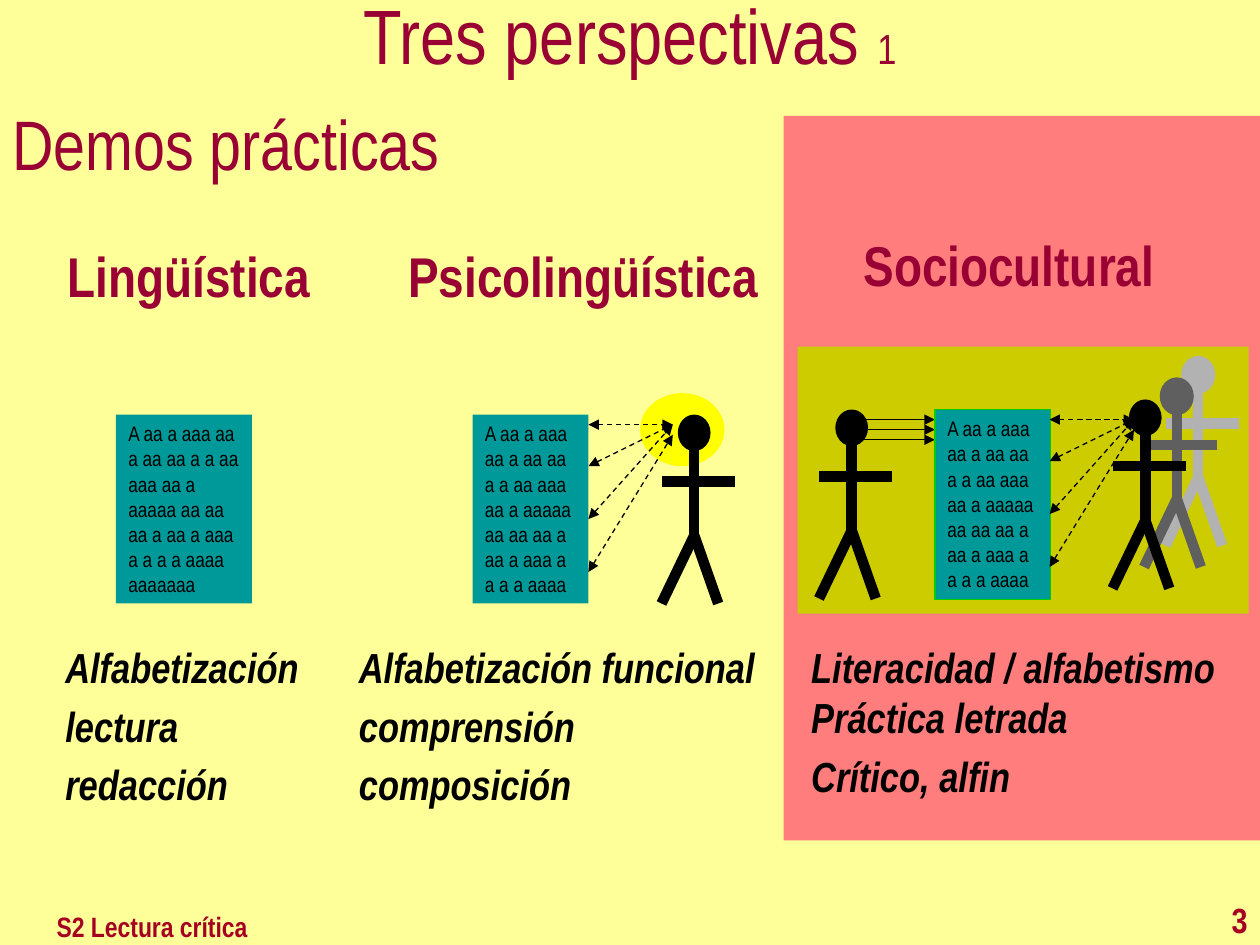
from dataclasses import dataclass

import pptx
import pptx.dml.color
import pptx.enum.dml
import pptx.enum.shapes
import pptx.enum.text
import pptx.oxml.ns
import pptx.util
from lxml import etree

Inches = pptx.util.Inches
Pt = pptx.util.Pt
Kind = pptx.enum.shapes.MSO_SHAPE
Align = pptx.enum.text.PP_ALIGN
Anchor = pptx.enum.text.MSO_ANCHOR


@dataclass(frozen=True)
class Theme:
    font: str = "Arial Narrow"
    back: str = "FFFF99"
    head: str = "990033"
    foot: str = "A50021"
    ink: str = "000000"
    mid: str = "5F5F5F"
    pale: str = "B2B2B2"
    page: str = "009999"
    edge: str = "00CC00"
    glow: str = "FFFF00"
    panel: str = "FF7D7D"
    scene: str = "CCCC00"
    title: float = 44
    lead: float = 40
    name: float = 32
    body: float = 24
    num: float = 20
    note: float = 16
    small: float = 12
    limb: float = 6
    thin: float = 0.75


@dataclass(frozen=True)
class Box:
    x: float
    y: float
    w: float
    h: float

    def spans(self) -> list:
        return [Inches(v) for v in (self.x, self.y, self.w, self.h)]


@dataclass(frozen=True)
class Column:
    name: str
    top: Box
    notes: tuple
    base: Box


T = Theme()
deck = pptx.Presentation()
deck.slide_width, deck.slide_height = Inches(10), Inches(7.5)
slide = deck.slides.add_slide(deck.slide_layouts[6])


def color(code: str):
    return pptx.dml.color.RGBColor.from_string(code)


def write(frame, *lines, size=T.body, ink=T.head, bold=False, italic=False,
          align=Align.LEFT, anchor=Anchor.TOP, gap=0.0, lead=None, inset=0.1):
    """Fill a frame; each line is a string or a list of (text, size) runs."""
    frame.word_wrap = True
    frame.vertical_anchor = anchor
    frame.margin_left = Inches(inset)
    for i, line in enumerate(lines):
        para = frame.add_paragraph() if i else frame.paragraphs[0]
        para.alignment = align
        para.space_before = Pt(gap if i else 0)
        if lead:
            para.line_spacing = lead
        for text, pts in ([(line, size)] if isinstance(line, str) else line):
            run = para.add_run()
            run.text = text
            font = run.font
            font.name, font.size = T.font, Pt(pts)
            font.bold, font.italic = bold, italic
            font.color.rgb = color(ink)


def label(box: Box, *lines, **form) -> None:
    write(slide.shapes.add_textbox(*box.spans()).text_frame, *lines, **form)


def shape(kind, box: Box, fill: str, edge: str = ""):
    item = slide.shapes.add_shape(kind, *box.spans())
    item.shadow.inherit = False
    item.fill.solid()
    item.fill.fore_color.rgb = color(fill)
    if edge:
        item.line.color.rgb = color(edge)
        item.line.width = Pt(T.thin)
    else:
        item.line.fill.background()
    return item


def line(x1: float, y1: float, x2: float, y2: float, ink: str = T.ink,
         width: float = T.thin, dash: bool = False, ends: tuple = ()) -> None:
    item = slide.shapes.add_connector(
        pptx.enum.shapes.MSO_CONNECTOR.STRAIGHT,
        *[Inches(v) for v in (x1, y1, x2, y2)])
    item.line.color.rgb = color(ink)
    item.line.width = Pt(width)
    if dash:
        item.line.dash_style = pptx.enum.dml.MSO_LINE.DASH
    qn = pptx.oxml.ns.qn
    for end in ends:
        etree.SubElement(item.line._get_or_add_ln(), qn(f"a:{end}"), type="triangle")
    etree.SubElement(item._element.spPr, qn("a:effectLst"))


def person(x: float, y: float, ink: str = T.ink, edge: str = "") -> None:
    """Stick figure centred on x, with the top of its head at y."""
    shape(Kind.OVAL, Box(x - 0.13, y, 0.26, 0.29), ink, edge)
    hip = y + 0.96
    for x1, y1, x2, y2 in ((x, y + 0.15, x, hip + 0.05),
                           (x, hip, x + 0.19, y + 1.5),
                           (x, hip, x - 0.26, y + 1.5),
                           (x - 0.26, y + 0.53, x + 0.32, y + 0.53)):
        line(x1, y1, x2, y2, ink, T.limb)


def sheet(box: Box, text: str, edge: str = "") -> None:
    write(shape(Kind.RECTANGLE, box, T.page, edge).text_frame, text,
          size=T.small, ink=T.ink)


def gaze(x: float, y: float) -> None:
    """Dashed two-way arrows from a sheet edge to a reader's eye."""
    for drop, rise in ((0, 0), (0.75, 0), (0.33, 0), (1.17, 0.08)):
        line(x, y + drop, x + 0.67, y + rise, dash=True, ends=("headEnd", "tailEnd"))


# Background and panels
slide.background.fill.solid()
slide.background.fill.fore_color.rgb = color(T.back)
shape(Kind.RECTANGLE, Box(6.22, 0.92, 3.78, 5.75), T.panel)
shape(Kind.OVAL, Box(5.08, 3.12, 0.67, 0.58), T.glow)
shape(Kind.RECTANGLE, Box(6.33, 2.75, 3.58, 2.12), T.scene)

# Title, lead and footer
label(Box(0, 0, 10, 0.67), [("Tres perspectivas ", T.title), ("1", T.body)],
      align=Align.CENTER, anchor=Anchor.MIDDLE, lead=0.8)
label(Box(0, 0.75, 10, 0.8), "Demos prácticas", size=T.lead)
label(Box(0, 7.17, 6.06, 0.33), "S2 Lectura crítica", size=T.note,
      ink=T.foot, bold=True, inset=0.45)
label(Box(9.25, 7.08, 0.75, 0.42), "3", size=T.num, ink=T.foot, bold=True,
      align=Align.RIGHT)

# Column names and notes
COLUMNS = (
    Column("Lingüística", Box(0.25, 1.87, 2.5, 0.63),
           ("Alfabetización", "lectura", "redacción"),
           Box(0.42, 5.04, 2.08, 1.47)),
    Column("Psicolingüística", Box(2.92, 1.87, 3.42, 0.63),
           ("Alfabetización funcional", "comprensión", "composición"),
           Box(2.75, 5.04, 3.5, 1.47)),
    Column("Sociocultural", Box(6.26, 1.78, 3.5, 0.63),
           ("Literacidad / alfabetismo Práctica letrada", "Crítico, alfin"),
           Box(6.34, 5.04, 3.54, 1.39)),
)
for col in COLUMNS:
    label(col.top, col.name, size=T.name, bold=True, align=Align.CENTER)
    label(col.base, *col.notes, ink=T.ink, bold=True, italic=True, gap=4.8)

# Sheets, readers and writer
WORDS = ("A aa a aaa aa a aa aa a a aa aaa aa a aaaaa aa aa "
         "aa a aa a aaa a a a a aaaa")
person(5.51, 3.29)
sheet(Box(0.92, 3.29, 1.08, 1.5), WORDS + " aaaaaaa")
sheet(Box(3.75, 3.29, 0.92, 1.5), WORDS)
gaze(4.67, 3.37)

person(6.76, 3.25)
for row in range(3):
    y = 3.33 + row * 0.08
    line(6.75, y, 7.42, y, ends=("tailEnd",))
person(9.51, 2.83, T.pale, T.pale)
person(9.34, 3, T.mid, T.mid)
sheet(Box(7.42, 3.25, 0.92, 1.51), WORDS, T.edge)
person(9.09, 3.17)
gaze(8.33, 3.33)

deck.save("out.pptx")
